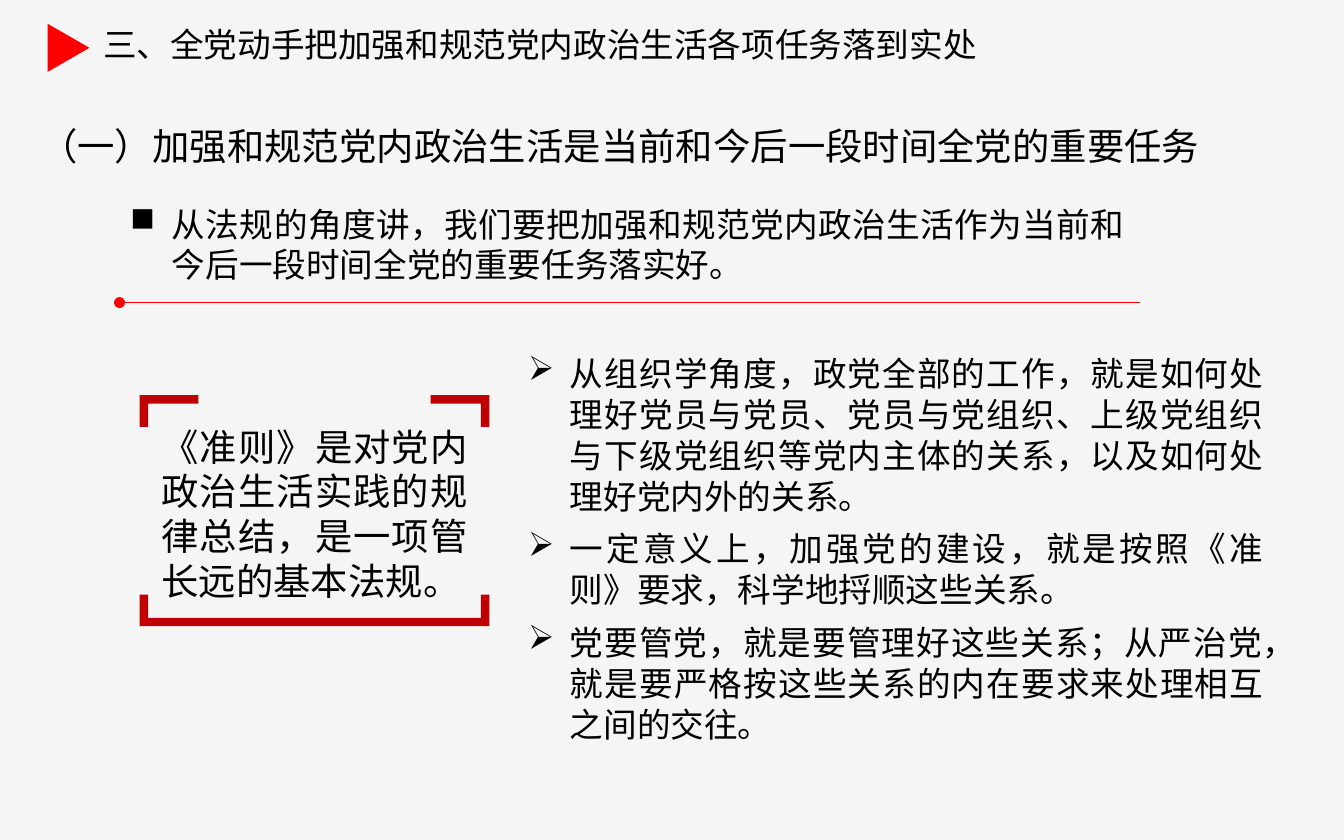
"""Build the slide on the Party-wide task of regulating political life."""
import dataclasses

import lxml.etree
import pptx
import pptx.dml.color
import pptx.enum.shapes
import pptx.enum.text
import pptx.oxml.ns
import pptx.util

Cm = pptx.util.Cm
qn = pptx.oxml.ns.qn
Shape = pptx.enum.shapes.MSO_SHAPE
Align = pptx.enum.text.PP_ALIGN


@dataclasses.dataclass(frozen=True)
class Theme:
    font: str = "Noto Sans CJK SC"
    mark: str = "OpenSymbol"
    ink: str = "000000"
    back: str = "F5F5F5"
    red: str = "FF0000"
    dark: str = "C00000"
    body: int = 18
    head: int = 20


theme = Theme()


def tint(fill, code):
    fill.solid()
    fill.fore_color.rgb = pptx.dml.color.RGBColor.from_string(code)


def write(frame, *texts, size=theme.body, align=Align.LEFT, bullet=None, pitch=None, gap=0):
    frame.word_wrap = True
    for i, text in enumerate(texts):
        para = frame.add_paragraph() if i else frame.paragraphs[0]
        para.alignment = align
        para.line_spacing = pptx.util.Pt(pitch or size * 1.2)
        para.space_before = pptx.util.Pt(gap if i else 0)
        props = para._p.get_or_add_pPr()
        props.set("hangingPunct", "1")
        if bullet:
            props.set("marL", str(Cm(0.79)))
            props.set("indent", str(-Cm(0.79)))
            lxml.etree.SubElement(props, qn("a:buFont"), typeface=theme.mark)
            lxml.etree.SubElement(props, qn("a:buChar"), char=bullet)
        run = para.add_run()
        run.text = text
        run.font.size = pptx.util.Pt(size)
        run.font.name = theme.font
        tint(run.font.fill, theme.ink)
        lxml.etree.SubElement(run._r.get_or_add_rPr(), qn("a:ea"), typeface=theme.font)


deck = pptx.Presentation()
deck.slide_width, deck.slide_height = Cm(25.4), Cm(15.88)
slide = deck.slides.add_slide(deck.slide_layouts[6])
tint(slide.background.fill, theme.back)
shapes = slide.shapes

arrow = shapes.add_shape(Shape.ISOSCELES_TRIANGLE, Cm(0.84), Cm(0.51), Cm(0.91), Cm(0.79))
arrow.rotation = 90
arrow.shadow.inherit = False
tint(arrow.fill, theme.red)
arrow.line.fill.background()

rule = shapes.add_connector(
    pptx.enum.shapes.MSO_CONNECTOR.STRAIGHT, Cm(2.26), Cm(5.72), Cm(21.54), Cm(5.72))
rule.line.width = pptx.util.Pt(0.75)
tint(rule.line.fill, theme.red)
lxml.etree.SubElement(rule.line._get_or_add_ln(), qn("a:headEnd"), type="oval")
lxml.etree.SubElement(rule._element.spPr, qn("a:effectLst"))

left, top, right, base = 2.64, 7.47, 9.25, 11.84
thick, tall, wide = 0.16, 0.6, 1.11
cup = [(left, base - tall), (left + thick, base - tall), (left + thick, base - thick),
       (right - thick, base - thick), (right - thick, base - tall), (right, base - tall),
       (right, base), (left, base)]
paths = [cup]
for edge, side in ((right, -1), (left, 1)):
    paths.append([(edge + side * x, top + y) for x, y in (
        (0, 0), (wide, 0), (wide, thick), (thick, thick), (thick, tall), (0, tall))])
pen = None
for path in paths:
    (x, y), *rest = [(Cm(a), Cm(b)) for a, b in path]
    if pen:
        pen.move_to(x, y)
    else:
        pen = shapes.build_freeform(x, y)
    pen.add_line_segments(rest, close=True)
frame = pen.convert_to_shape()
frame.shadow.inherit = False
tint(frame.fill, theme.dark)
frame.line.fill.background()
inner = frame.text_frame
inner.margin_left = inner.margin_right = Cm(0.41)
inner.margin_top, inner.margin_bottom = Cm(0.3), Cm(0.2)
inner.vertical_anchor = pptx.enum.text.MSO_ANCHOR.MIDDLE
write(inner, "《准则》是对党内政治生活实践的规律总结，是一项管长远的基本法规。",
      size=theme.head, align=Align.JUSTIFY)

boxes = [
    ((1.7, 0.33, 19.81, 1.02), ["三、全党动手把加强和规范党内政治生活各项任务落到实处"], {}),
    ((0.51, 2.21, 22.68, 1.12),
     ["（一）加强和规范党内政治生活是当前和今后一段时间全党的重要任务"],
     {"size": theme.head}),
    ((2.21, 3.73, 19.3, 1.8),
     ["从法规的角度讲，我们要把加强和规范党内政治生活作为当前和今后一段时间全党的重要任务落实好。"],
     {"align": Align.JUSTIFY, "bullet": "■"}),
    ((9.73, 6.53, 14.4, 7.72),
     ["从组织学角度，政党全部的工作，就是如何处理好党员与党员、党员与党组织、上级党组织与下级党组织等党内主体的关系，以及如何处理好党内外的关系。",
      "一定意义上，加强党的建设，就是按照《准则》要求，科学地捋顺这些关系。",
      "党要管党，就是要管理好这些关系；从严治党，就是要严格按这些关系的内在要求来处理相互之间的交往。"],
     {"align": Align.JUSTIFY, "bullet": "➢", "pitch": 22, "gap": 6}),
]
for place, texts, style in boxes:
    box = shapes.add_textbox(*map(Cm, place)).text_frame
    box.auto_size = pptx.enum.text.MSO_AUTO_SIZE.SHAPE_TO_FIT_TEXT
    write(box, *texts, **style)

deck.save("out.pptx")
